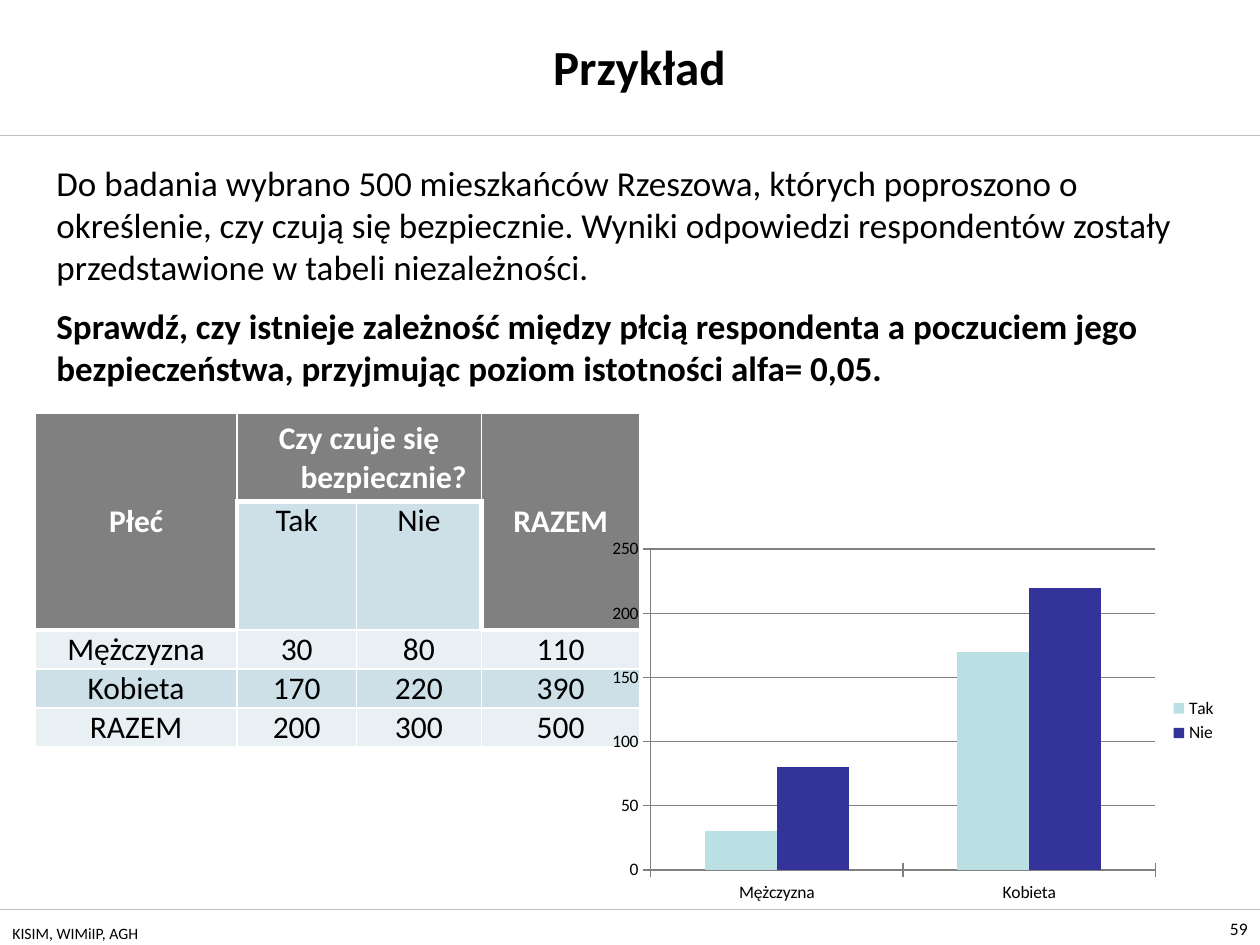
from pptx import Presentation
from pptx.chart import data as chart_data
from pptx.dml.color import RGBColor
from pptx.enum import chart as ch, text as tx
from pptx.oxml import parse_xml
from pptx.oxml.ns import nsdecls, qn
from pptx.util import Inches, Pt

# Content
TITLE = "Przykład"
BODY = [
    ("Do badania wybrano 500 mieszkańców Rzeszowa, których poproszono o określenie, "
     "czy czują się bezpiecznie. Wyniki odpowiedzi respondentów zostały "
     "przedstawione w tabeli niezależności.", False),
    ("Sprawdź, czy istnieje zależność między płcią respondenta a poczuciem jego "
     "bezpieczeństwa, przyjmując poziom istotności alfa= 0,05.", True),
]
FOOTER, PAGE = "KISIM, WIMiIP, AGH", "59"
ANSWERS = ["Tak", "Nie"]
COUNTS = {"Mężczyzna": [30, 80], "Kobieta": [170, 220]}
TOTAL = "RAZEM"

THEME = {
    "font": "Calibri", "ink": "000000", "white": "FFFFFF", "rule": "C0C0C0",
    "header": "808080", "band": ["CDE0E8", "E8F0F4"], "series": ["BBE0E3", "333399"],
    "title": 28, "body": 20, "table": 18, "page": 10, "footer": 9, "chart": 10,
    "thin": 1, "thick": 3,
}
COL_WIDTHS = [1.6, 0.95, 0.99, 1.26]
ROW_HEIGHTS = [0.7, 1.02, 0.31, 0.31, 0.31]
LEFT, CENTER, RIGHT = tx.PP_ALIGN.LEFT, tx.PP_ALIGN.CENTER, tx.PP_ALIGN.RIGHT
TOP, MIDDLE, BOTTOM = tx.MSO_ANCHOR.TOP, tx.MSO_ANCHOR.MIDDLE, tx.MSO_ANCHOR.BOTTOM


def rgb(name):
    return RGBColor.from_string(THEME.get(name, name))


def set_font(font, size, color="ink", bold=False):
    font.name, font.size, font.bold = THEME["font"], Pt(THEME[size]), bold
    font.color.rgb = rgb(color)


def add_text(slide, box, paragraphs, size, align=LEFT, anchor=TOP):
    frame = slide.shapes.add_textbox(*map(Inches, box)).text_frame
    frame.word_wrap, frame.vertical_anchor = True, anchor
    for i, (words, bold) in enumerate(paragraphs):
        paragraph = frame.add_paragraph() if i else frame.paragraphs[0]
        paragraph.text, paragraph.alignment = words, align
        if i:
            paragraph.space_before = Pt(THEME[size] / 2)
        set_font(paragraph.font, size, bold=bold)


def add_rule(slide, y):
    rule = slide.shapes.add_connector(1, 0, Inches(y), Inches(10), Inches(y))
    rule.line.color.rgb, rule.line.width = rgb("rule"), Pt(0.25)
    rule._element.spPr.append(parse_xml(f"<a:effectLst {nsdecls('a')}/>"))


def border_weights(row, col):
    """Thick lines run under the grey header cells and beside the answer row."""
    answer = col in (1, 2)
    thick = {
        "L": (row, col) in ((1, 1), (1, 3)),
        "R": (row, col) in ((1, 0), (1, 2)),
        "T": (row == 1 and answer) or (row == 2 and not answer),
        "B": (row == 0 and answer) or (row == 1 and not answer),
    }
    return {side: THEME["thick" if on else "thin"] for side, on in thick.items()}


def style_cell(cell, row, col, words):
    header = row == 0 or (row == 1 and col in (0, 3))
    tc_pr = cell._tc.get_or_add_tcPr()
    for side, weight in border_weights(row, col).items():
        tc_pr.append(parse_xml(
            f'<a:ln{side} {nsdecls("a")} w="{Pt(weight)}"><a:solidFill>'
            f'<a:srgbClr val="{THEME["white"]}"/></a:solidFill></a:ln{side}>'))
    cell.fill.solid()
    cell.fill.fore_color.rgb = rgb("header" if header else THEME["band"][(row + 1) % 2])
    cell.vertical_anchor = MIDDLE if header else TOP
    if not header or col == 3:
        cell.margin_left = cell.margin_right = cell.margin_top = cell.margin_bottom = 0
    paragraph = cell.text_frame.paragraphs[0]
    paragraph.text, paragraph.alignment = words, CENTER
    hanging = paragraph._p.get_or_add_pPr()
    hanging.set("marL", str(Inches(0.39)))
    hanging.set("indent", str(-Inches(0.39)))
    set_font(paragraph.font, "table", "white" if header else "ink", header)


def add_contingency_table(slide):
    by_answer = [sum(column) for column in zip(*COUNTS.values())]
    body = [[sex, *n, sum(n)] for sex, n in [*COUNTS.items(), (TOTAL, by_answer)]]
    rows = [["Płeć", "Czy czuje się bezpiecznie?", "", TOTAL], ["", *ANSWERS, ""], *body]
    table = slide.shapes.add_table(
        len(rows), len(COL_WIDTHS), Inches(0.28), Inches(3.28),
        Inches(sum(COL_WIDTHS)), Inches(sum(ROW_HEIGHTS))).table
    for column, width in zip(table.columns, COL_WIDTHS):
        column.width = Inches(width)
    for line, height in zip(table.rows, ROW_HEIGHTS):
        line.height = Inches(height)
    for r, values in enumerate(rows):
        for c, value in enumerate(values):
            style_cell(table.cell(r, c), r, c, str(value))
    for start, end in [((0, 0), (1, 0)), ((0, 1), (0, 2)), ((0, 3), (1, 3))]:
        table.cell(*start).merge(table.cell(*end))


def add_answer_chart(slide):
    answers = chart_data.CategoryChartData()
    answers.categories = list(COUNTS)
    for name, values in zip(ANSWERS, zip(*COUNTS.values())):
        answers.add_series(name, values)
    chart = slide.shapes.add_chart(
        ch.XL_CHART_TYPE.COLUMN_CLUSTERED, Inches(4.76), Inches(4.22),
        Inches(5), Inches(3), answers).chart
    set_font(chart.font, "chart")
    chart.has_title = False
    chart.has_legend = True
    chart.legend.position = ch.XL_LEGEND_POSITION.RIGHT
    chart.legend.include_in_layout = False
    plot = chart.plots[0]
    plot.vary_by_categories, plot.gap_width, plot.overlap = False, 150, 0
    for series, color in zip(plot.series, THEME["series"]):
        series.format.fill.solid()
        series.format.fill.fore_color.rgb = rgb(color)
    counts = chart.value_axis
    counts.minimum_scale, counts.maximum_scale, counts.major_unit = 0, 250, 50
    counts.has_major_gridlines = True
    for axis in (chart.category_axis, counts):
        axis.major_tick_mark = ch.XL_TICK_MARK.CROSS
        axis.format.line.color.rgb = rgb("header")
    counts.major_gridlines.format.line.color.rgb = rgb("header")


def main():
    deck = Presentation()
    deck.slide_width, deck.slide_height = Inches(10), Inches(7.5)
    slide = deck.slides.add_slide(deck.slide_layouts[6])

    # Rules, page number and footer
    for y in (1.07, 7.22):
        add_rule(slide, y)
    add_text(slide, (9.49, 7.22, 0.51, 0.28), [(PAGE, False)], "page", RIGHT, BOTTOM)
    add_text(slide, (0, 7.28, 3.17, 0.22), [(FOOTER, False)], "footer")

    # Title and task
    add_text(slide, (0.98, 0.21, 8.19, 0.63), [(TITLE, True)], "title", CENTER, MIDDLE)
    add_text(slide, (0.35, 1.23, 9.16, 5.75), BODY, "body")

    # Results
    add_contingency_table(slide)
    add_answer_chart(slide)
    deck.save("out.pptx")


if __name__ == "__main__":
    main()
